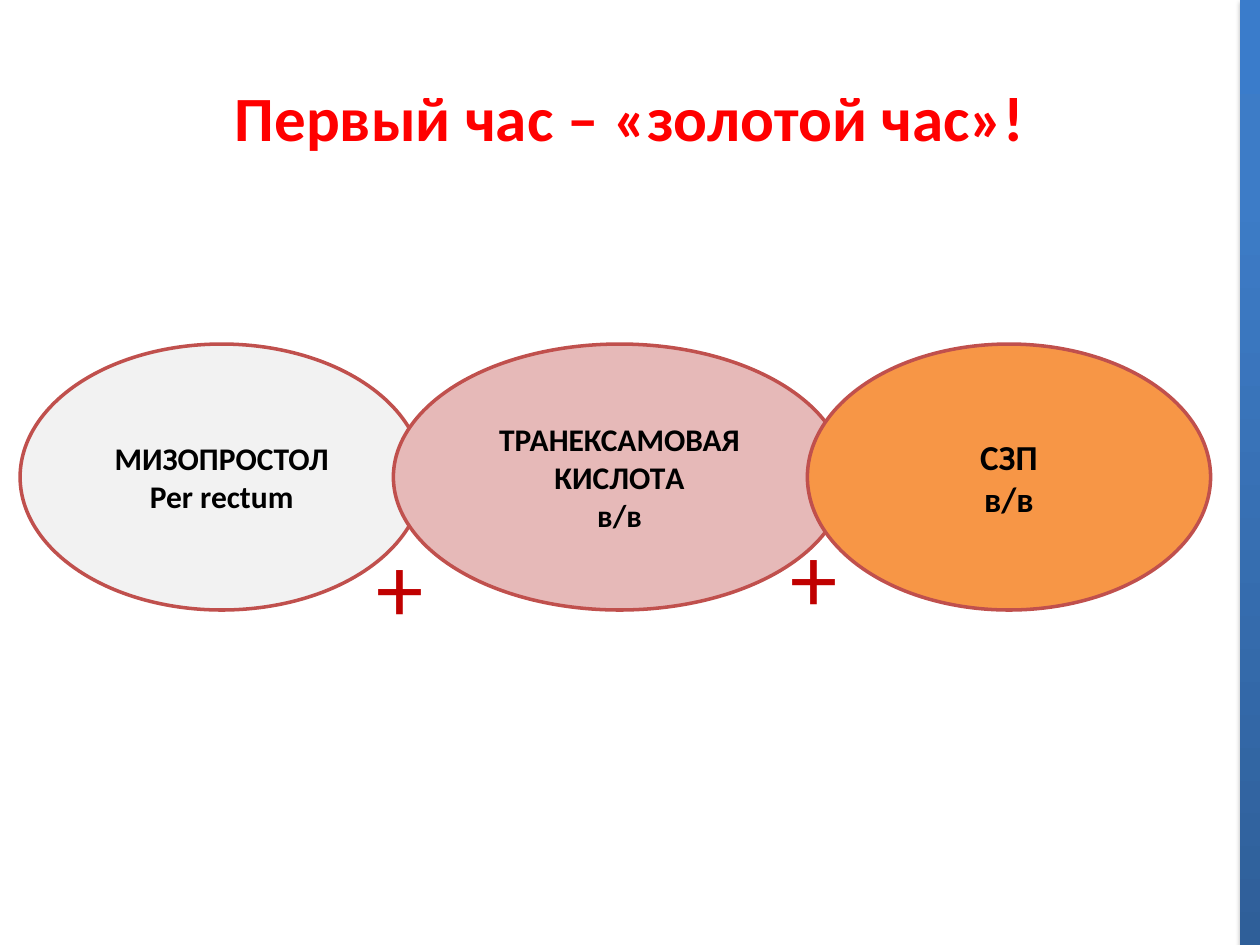
from lxml import etree
from pptx import Presentation
from pptx import util as u
from pptx.dml.color import RGBColor
from pptx.enum import shapes, text
from pptx.oxml import ns


def rgb(value):
    return RGBColor.from_string(value)


def add_node(parent, tag, **attrs):
    node = etree.SubElement(parent, ns.qn(tag))
    for key, value in attrs.items():
        node.set(key, str(value))
    return node


class Deck:
    font = "Calibri"
    outline = "C0504D"
    ink = "000000"

    def __init__(self, width, height):
        self.prs = Presentation()
        self.prs.slide_width = u.Pt(width)
        self.prs.slide_height = u.Pt(height)
        self.s = self.prs.slides.add_slide(self.prs.slide_layouts[6])

    def shape(self, kind, box):
        sp = self.s.shapes.add_shape(kind, *map(u.Pt, box))
        sp.shadow.inherit = False
        return sp

    def set_text(self, sp, lines, size, color, bold, align):
        tf = sp.text_frame
        tf.word_wrap = True
        for i, line in enumerate(lines):
            p = tf.paragraphs[0] if i == 0 else tf.add_paragraph()
            p.text = line
            p.alignment = align
            p.font.name = self.font
            p.font.size = u.Pt(size)
            p.font.bold = bold
            p.font.color.rgb = rgb(color)
        return tf

    def ellipse(self, box, lines, size, fill):
        sp = self.shape(shapes.MSO_SHAPE.OVAL, box)
        sp.fill.solid()
        sp.fill.fore_color.rgb = rgb(fill)
        sp.line.color.rgb = rgb(self.outline)
        sp.line.width = u.Pt(2)
        tf = self.set_text(sp, lines, size, self.ink, True, text.PP_ALIGN.CENTER)
        tf.vertical_anchor = text.MSO_ANCHOR.MIDDLE

    def textbox(self, box, line, size, color, bold=False,
                align=text.PP_ALIGN.LEFT, anchor=text.MSO_ANCHOR.TOP):
        sp = self.s.shapes.add_textbox(*map(u.Pt, box))
        tf = self.set_text(sp, [line], size, color, bold, align)
        tf.vertical_anchor = anchor

    def gradient_bar(self, box, stops):
        sp = self.shape(shapes.MSO_SHAPE.RECTANGLE, box)
        sp.line.fill.background()
        sp.fill.gradient()
        sp.fill.gradient_angle = 90
        props = sp.element.spPr
        gs_list = props.find(".//" + ns.qn("a:gsLst"))
        for gs in list(gs_list):
            gs_list.remove(gs)
        for percent, color in stops:
            gs = add_node(gs_list, "a:gs", pos=percent * 1000)
            add_node(gs, "a:srgbClr", val=color)
        shadow = add_node(props.find(ns.qn("a:effectLst")), "a:outerShdw",
                          blurRad=u.Pt(3.1), dist=u.Pt(1.8), dir=5400000,
                          rotWithShape=0)
        tint = add_node(shadow, "a:srgbClr", val="000000")
        add_node(tint, "a:alpha", val=35000)


def main():
    deck = Deck(720, 540)
    top, height = 196.6, 152
    therapies = [
        (11.5, 230.4, ["МИЗОПРОСТОЛ", "Per rectum"], 18, "F2F2F2"),
        (224.8, 258.5, ["ТРАНЕКСАМОВАЯ", "КИСЛОТA", "в/в"], 18, "E6B9B8"),
        (461.4, 230.4, ["СЗП", "в/в"], 20, "F79646"),
    ]
    for left, width, lines, size, fill in therapies:
        deck.ellipse((left, top, width, height), lines, size, fill)
    for left, plus_top in [(208, 298), (444.4, 292.3)]:
        deck.textbox((left, plus_top, 44.6, 72.7), "+", 54, "C00000")
    deck.gradient_bar((708.5, 0, 11.5, 540),
                      [(0, "2F5F99"), (80, "3D7CC7"), (100, "3A7CCB")])
    deck.textbox((36, 21.6, 648, 90), "Первый час – «золотой час»!", 36,
                 "FF0000", True, text.PP_ALIGN.CENTER, text.MSO_ANCHOR.MIDDLE)
    deck.prs.save("out.pptx")


if __name__ == "__main__":
    main()
